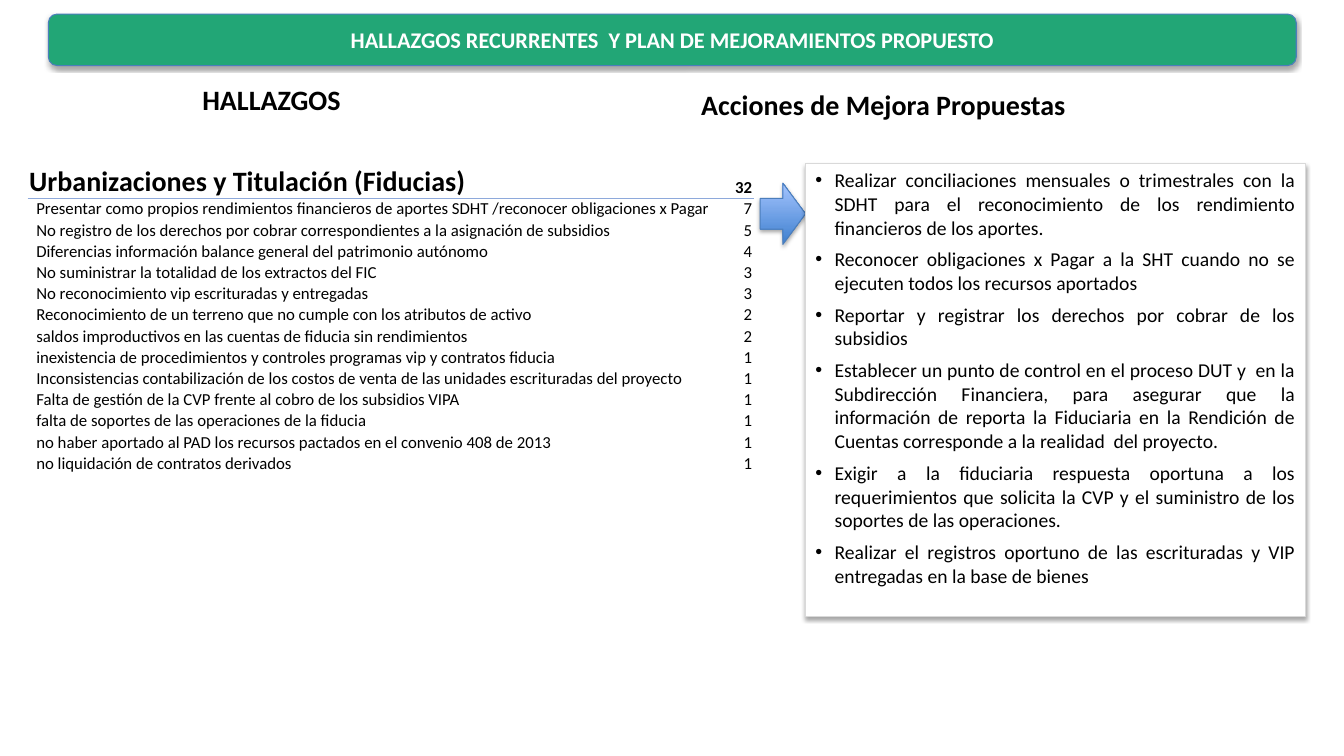
from dataclasses import dataclass

import pptx
import pptx.dml.color
import pptx.enum.dml
import pptx.enum.shapes
import pptx.enum.text
import pptx.oxml
import pptx.oxml.ns
import pptx.util
from lxml import etree

SHAPES = pptx.enum.shapes.MSO_SHAPE
ALIGN = pptx.enum.text.PP_ALIGN
ANCHOR = pptx.enum.text.MSO_ANCHOR
CELL = pptx.util.Inches(1 / 12)  # the slide is a grid of 160 columns by 90 rows


@dataclass(frozen=True)
class Theme:
    font: str = "Calibri"
    banner: str = "22A676"
    outline: str = "4B7EBC"
    panel_outline: str = "D9D9D9"
    arrow_dark: str = "3F80CE"
    arrow_light: str = "A4C4FF"
    rule: str = "8EA9DB"
    white: str = "FFFFFF"
    black: str = "000000"
    heading: int = 20
    banner_size: int = 16
    body: int = 14
    table: int = 12
    hairline: float = 0.75


@dataclass(frozen=True)
class Box:
    """A place on the grid, in columns and rows."""
    column: float
    row: float
    columns: float
    rows: float

    def place(self):
        return [round(n * CELL) for n in (self.column, self.row, self.columns, self.rows)]


THEME = Theme()
FINDINGS_TITLE = ("Urbanizaciones y Titulación (Fiducias)", 32)
FINDINGS = [
    ("Presentar como propios rendimientos financieros de aportes SDHT /reconocer obligaciones x Pagar", 7),
    ("No registro de los derechos por cobrar correspondientes a la asignación de subsidios", 5),
    ("Diferencias información balance general del patrimonio autónomo", 4),
    ("No suministrar la totalidad de los extractos del FIC", 3),
    ("No reconocimiento vip escrituradas y entregadas", 3),
    ("Reconocimiento de un terreno que no cumple con los atributos de activo", 2),
    ("saldos improductivos en las cuentas de fiducia sin rendimientos", 2),
    ("inexistencia de procedimientos y controles programas vip y contratos fiducia", 1),
    ("Inconsistencias contabilización de los costos de venta de las unidades escrituradas del proyecto", 1),
    ("Falta de gestión de la CVP frente al cobro de los subsidios VIPA", 1),
    ("falta de soportes de las operaciones de la fiducia", 1),
    ("no haber aportado al PAD los recursos pactados en el convenio 408 de 2013", 1),
    ("no liquidación de contratos derivados", 1),
]
ACTIONS = [
    "Realizar conciliaciones mensuales o trimestrales con la SDHT para el reconocimiento de los "
    "rendimiento financieros de los aportes.",
    "Reconocer obligaciones x Pagar a la SHT cuando no se ejecuten todos los recursos aportados",
    "Reportar y registrar los derechos por cobrar de los subsidios",
    "Establecer un punto de control en el proceso DUT y  en la Subdirección Financiera, para asegurar "
    "que la información de reporta la Fiduciaria en la Rendición de Cuentas corresponde a la realidad  "
    "del proyecto.",
    "Exigir a la fiduciaria respuesta oportuna a los requerimientos que solicita la CVP y el suministro "
    "de los soportes de las operaciones.",
    "Realizar el registros oportuno de las escrituradas y VIP entregadas en la base de bienes",
]


def rgb(code):
    return pptx.dml.color.RGBColor.from_string(code)


def add_run(paragraph, text, size, color=THEME.black, bold=False):
    run = paragraph.add_run()
    run.text = text
    run.font.name = THEME.font
    run.font.size = pptx.util.Pt(size)
    run.font.bold = bold
    run.font.color.rgb = rgb(color)


def add_shadow(shape):
    shape.shadow.inherit = False
    effects = shape._element.spPr.find(pptx.oxml.ns.qn("a:effectLst"))
    effects.append(pptx.oxml.parse_xml(
        f'<a:outerShdw {pptx.oxml.ns.nsdecls("a")} blurRad="{pptx.util.Pt(3.1)}" '
        f'dist="{pptx.util.Pt(1.8)}" dir="5400000" rotWithShape="0">'
        f'<a:srgbClr val="{THEME.black}"><a:alpha val="35000"/></a:srgbClr></a:outerShdw>'))


def add_raised_shape(slide, kind, box, outline, fill=None):
    shape = slide.shapes.add_shape(kind, *box.place())
    if fill:
        shape.fill.solid()
        shape.fill.fore_color.rgb = rgb(fill)
    shape.line.color.rgb = rgb(outline)
    shape.line.width = pptx.util.Pt(THEME.hairline)
    add_shadow(shape)
    return shape


def add_banner(slide, box, text):
    banner = add_raised_shape(slide, SHAPES.ROUNDED_RECTANGLE, box, THEME.outline, THEME.banner)
    banner.text_frame.vertical_anchor = ANCHOR.MIDDLE
    paragraph = banner.text_frame.paragraphs[0]
    paragraph.alignment = ALIGN.CENTER
    add_run(paragraph, text, THEME.banner_size, THEME.white, True)


def add_heading(slide, box, text):
    frame = slide.shapes.add_textbox(*box.place()).text_frame
    frame.word_wrap = False
    frame.auto_size = pptx.enum.text.MSO_AUTO_SIZE.SHAPE_TO_FIT_TEXT
    add_run(frame.paragraphs[0], text, THEME.heading, bold=True)


def add_arrow(slide, box):
    arrow = add_raised_shape(slide, SHAPES.RIGHT_ARROW, box, THEME.outline)
    arrow.fill.gradient()
    arrow.fill.gradient_angle = 90
    for stop, color in zip(arrow.fill.gradient_stops, (THEME.arrow_dark, THEME.arrow_light)):
        stop.color.rgb = rgb(color)


def add_bullet(paragraph):
    properties = paragraph._p.get_or_add_pPr()
    indent = pptx.util.Inches(0.19)
    properties.set("marL", str(indent))
    properties.set("indent", str(-indent))
    etree.SubElement(properties, pptx.oxml.ns.qn("a:buFont"), typeface="Arial")
    etree.SubElement(properties, pptx.oxml.ns.qn("a:buChar"), char="•")


def add_actions(slide, box, actions):
    panel = add_raised_shape(slide, SHAPES.RECTANGLE, box, THEME.panel_outline, THEME.white)
    frame = panel.text_frame
    frame.word_wrap = True
    frame.vertical_anchor = ANCHOR.TOP
    for index, action in enumerate(actions):
        paragraph = frame.add_paragraph() if index else frame.paragraphs[0]
        add_bullet(paragraph)
        paragraph.alignment = ALIGN.JUSTIFY
        if index:
            paragraph.space_before = pptx.util.Pt(6)
        add_run(paragraph, action, THEME.body)


def add_cell_rule(cell, side):
    cell._tc.get_or_add_tcPr().insert(0, pptx.oxml.parse_xml(
        f'<a:{side} {pptx.oxml.ns.nsdecls("a")} w="{pptx.util.Pt(0.5)}">'
        f'<a:solidFill><a:srgbClr val="{THEME.rule}"/></a:solidFill></a:{side}>'))


def add_findings(slide, box, title, findings):
    rows = [title, *findings]
    left, top, width, height = box.place()
    table = slide.shapes.add_table(len(rows), 2, left, top, width, height).table
    table.first_row = table.horz_banding = False
    for column, share in zip(table.columns, (0.965, 0.035)):
        column.width = round(width * share)
    title_height = round(height * 0.11)
    for index, values in enumerate(rows):
        is_title = index == 0
        table.rows[index].height = title_height if is_title else (height - title_height) // len(findings)
        for position, value in enumerate(values):
            cell = table.cell(index, position)
            is_label = position == 0
            cell.fill.background()
            cell.vertical_anchor = ANCHOR.BOTTOM
            cell.margin_left = pptx.util.Inches(0.08 if is_label and not is_title else 0.01)
            cell.margin_top = cell.margin_right = pptx.util.Inches(0.01)
            cell.margin_bottom = 0
            if index < 2:
                add_cell_rule(cell, "lnB" if is_title else "lnT")
            paragraph = cell.text_frame.paragraphs[0]
            paragraph.alignment = ALIGN.LEFT if is_label else ALIGN.RIGHT
            size = THEME.heading if is_title and is_label else THEME.table
            add_run(paragraph, str(value), size, bold=is_title)


def main():
    presentation = pptx.Presentation()
    presentation.slide_width = 160 * CELL
    presentation.slide_height = 90 * CELL
    slide = presentation.slides.add_slide(presentation.slide_layouts[6])
    add_banner(slide, Box(5.76, 1.68, 148.56, 6.12), "HALLAZGOS RECURRENTES  Y PLAN DE MEJORAMIENTOS PROPUESTO")
    add_heading(slide, Box(22.9, 9.24, 19.1, 5.25), "HALLAZGOS")
    add_arrow(slide, Box(90.5, 21.8, 5.4, 7.3))
    add_actions(slide, Box(95.9, 19.45, 59.5, 53.9), ACTIONS)
    add_heading(slide, Box(82.3, 9.84, 46.2, 5.25), "Acciones de Mejora Propuestas")
    add_findings(slide, Box(3.36, 19.45, 86.3, 36.7), FINDINGS_TITLE, FINDINGS)
    presentation.save("out.pptx")


if __name__ == "__main__":
    main()
